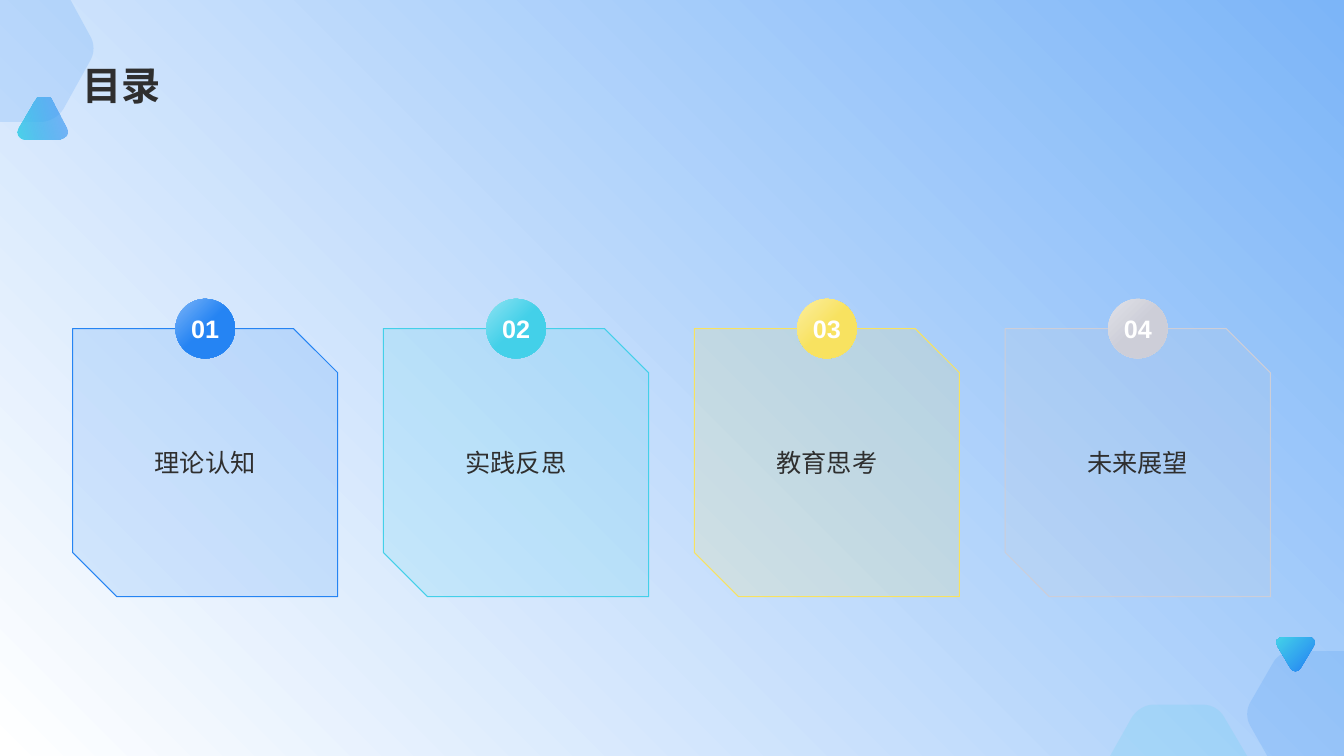
from lxml.etree import SubElement
from pptx import Presentation
from pptx.dml.color import RGBColor
from pptx.enum.shapes import MSO_SHAPE
from pptx.enum.text import MSO_ANCHOR, PP_ALIGN
from pptx.oxml.ns import qn
from pptx.util import Inches, Pt

SLIDE_WIDTH, SLIDE_HEIGHT = 13.33, 7.5
COLORS = {
    "sky": "7CB5F8", "white": "FFFFFF", "ink": "2F2F2F",
    "blue": "2584F3", "cyan": "43D0E9", "pale cyan": "8EE3F2",
    "yellow": "F8E260", "pale yellow": "FBEEA0",
    "gray": "CDCED8", "pale gray": "E1E2E8",
}
LATIN_FONT, CHINESE_FONT = "Arial", "Noto Sans CJK JP"

TITLE = "目录"
CHAPTERS = [  # label, main colour, light end of the badge
    ("理论认知", "blue", "sky"),
    ("实践反思", "cyan", "pale cyan"),
    ("教育思考", "yellow", "pale yellow"),
    ("未来展望", "gray", "pale gray"),
]

# Outlines in inches: a pair is a corner, six numbers are a Bézier curve.
TINTED_HEXAGONS = [
    ("blue", [(0, 0), (0.7, 0), (0.89, 0.35), (0.94, 0.43, 0.94, 0.53, 0.89, 0.61),
              (0.63, 1.08), (0.58, 1.16, 0.49, 1.21, 0.4, 1.21), (0, 1.21)]),
    ("blue", [(12.83, 6.46), (13.33, 6.46), (13.33, 7.5), (12.57, 7.5), (12.4, 7.2),
              (12.36, 7.13, 12.36, 7.04, 12.4, 6.97), (12.63, 6.57),
              (12.67, 6.5, 12.75, 6.46, 12.83, 6.46)]),
    ("cyan", [(11.44, 6.99), (11.93, 6.99), (12.02, 6.99, 12.1, 7.04, 12.14, 7.11),
              (12.37, 7.5), (11.01, 7.5), (11.23, 7.11),
              (11.28, 7.04, 11.36, 6.99, 11.44, 6.99)]),
]
GRADIENT_TRIANGLES = [  # gradient angle, opacity of each end, outline
    (225, (100, 100), [(12.9, 6.63), (13.03, 6.41), (13.06, 6.37, 13.03, 6.32, 12.98, 6.32),
                       (12.72, 6.32), (12.67, 6.32, 12.64, 6.37, 12.67, 6.41),
                       (12.8, 6.63), (12.82, 6.67, 12.88, 6.67, 12.9, 6.63)]),
    (165, (50, 96), [(0.66, 1.26), (0.5, 0.96), (0.47, 0.9, 0.39, 0.9, 0.36, 0.96),
                     (0.18, 1.26), (0.15, 1.32, 0.19, 1.38, 0.25, 1.38),
                     (0.59, 1.38), (0.65, 1.37, 0.69, 1.31, 0.66, 1.26)]),
]

CONTENT_LEFT, CONTENT_WIDTH = 0.72, 11.88
TITLE_TOP, TITLE_HEIGHT = 0.14, 0.98
CARD_TOP, CARD_WIDTH, CARD_HEIGHT = 3.26, 2.63, 2.66
CARD_STEP = (CONTENT_WIDTH - CARD_WIDTH) / (len(CHAPTERS) - 1)
BADGE_SIZE = 0.59
BADGE_INSET = 0.12
TINT_OPACITY = 15


def rgb(name):
    return RGBColor.from_string(COLORS[name])


def set_opacity(color_parent, percent):
    color = color_parent.find(qn("a:srgbClr"))
    SubElement(color, qn("a:alpha")).set("val", str(percent * 1000))


def tint(shape, color):
    shape.fill.solid()
    shape.fill.fore_color.rgb = rgb(color)
    set_opacity(shape._element.spPr.find(qn("a:solidFill")), TINT_OPACITY)


def fill_gradient(fill, clockwise_angle, stops):
    """Fill with two (position, colour) stops."""
    fill.gradient()
    fill.gradient_angle = 360 - clockwise_angle
    for stop, (position, color) in zip(fill.gradient_stops, stops):
        stop.position = position
        stop.color.rgb = rgb(color)


def add_outline(slide, outline):
    """Draw the corners as a freeform, then bend the segments that are curves."""
    corners = [tuple(map(Inches, part[-2:])) for part in outline]
    builder = slide.shapes.build_freeform(*corners[0])
    builder.add_line_segments(corners[1:], close=True)
    shape = builder.convert_to_shape()
    shape.shadow.inherit = False
    shape.line.fill.background()

    segments = list(shape._element.spPr.iter(qn("a:lnTo")))
    for segment, part in zip(segments, outline[1:]):
        if len(part) == 2:
            continue
        segment.tag = qn("a:cubicBezTo")
        segment.remove(segment[0])
        for x, y in zip(part[::2], part[1::2]):
            point = SubElement(segment, qn("a:pt"))
            point.set("x", str(Inches(x) - shape.left))
            point.set("y", str(Inches(y) - shape.top))
    return shape


def add_shape(slide, preset, *box):
    shape = slide.shapes.add_shape(preset, *map(Inches, box))
    shape.shadow.inherit = False
    return shape


def write(shape, text, size, color, font_name, bold=False, align=PP_ALIGN.CENTER,
          anchor=MSO_ANCHOR.MIDDLE, wrap=True):
    frame = shape.text_frame
    frame.word_wrap = wrap
    frame.vertical_anchor = anchor
    paragraph = frame.paragraphs[0]
    paragraph.text = text
    paragraph.alignment = align
    font = paragraph.font
    font.size, font.bold, font.name = Pt(size), bold, font_name
    font.color.rgb = rgb(color)
    SubElement(font._element, qn("a:ea")).set("typeface", CHINESE_FONT)


def add_decorations(slide):
    for color, outline in TINTED_HEXAGONS:
        tint(add_outline(slide, outline), color)
    for angle, opacities, outline in GRADIENT_TRIANGLES:
        triangle = add_outline(slide, outline)
        fill_gradient(triangle.fill, angle, [(0, "blue"), (1, "cyan")])
        for stop, opacity in zip(triangle._element.spPr.iter(qn("a:gs")), opacities):
            set_opacity(stop, opacity)


def add_chapter(slide, index, label, color, light_color):
    left = CONTENT_LEFT + index * CARD_STEP
    card = add_shape(slide, MSO_SHAPE.SNIP_2_DIAG_RECTANGLE,
                     left, CARD_TOP, CARD_WIDTH, CARD_HEIGHT)
    tint(card, color)
    card.line.color.rgb = rgb(color)
    card.line.width = Pt(0.75)
    write(card, label, 18, "ink", CHINESE_FONT)

    badge = add_shape(slide, MSO_SHAPE.ROUNDED_RECTANGLE,
                      left + (CARD_WIDTH - BADGE_SIZE) / 2, CARD_TOP - BADGE_SIZE / 2,
                      BADGE_SIZE, BADGE_SIZE)
    badge.adjustments[0] = 0.5
    badge.line.fill.background()
    fill_gradient(badge.fill, 45, [(0, light_color), (0.5, color)])
    frame = badge.text_frame
    frame.margin_left = frame.margin_right = Inches(BADGE_INSET)
    frame.margin_top = frame.margin_bottom = Inches(BADGE_INSET)
    write(badge, f"{index + 1:02}", 18, "white", LATIN_FONT, bold=True, wrap=False)


def main():
    presentation = Presentation()
    presentation.slide_width = Inches(SLIDE_WIDTH)
    presentation.slide_height = Inches(SLIDE_HEIGHT)
    slide = presentation.slides.add_slide(presentation.slide_layouts[6])
    fill_gradient(slide.background.fill, 135, [(0, "sky"), (1, "white")])
    add_decorations(slide)

    title = slide.shapes.add_textbox(*map(Inches, (
        CONTENT_LEFT, TITLE_TOP, CONTENT_WIDTH, TITLE_HEIGHT)))
    write(title, TITLE, 28, "ink", LATIN_FONT, bold=True,
          align=PP_ALIGN.LEFT, anchor=MSO_ANCHOR.BOTTOM)

    for index, chapter in enumerate(CHAPTERS):
        add_chapter(slide, index, *chapter)
    presentation.save("out.pptx")


if __name__ == "__main__":
    main()
